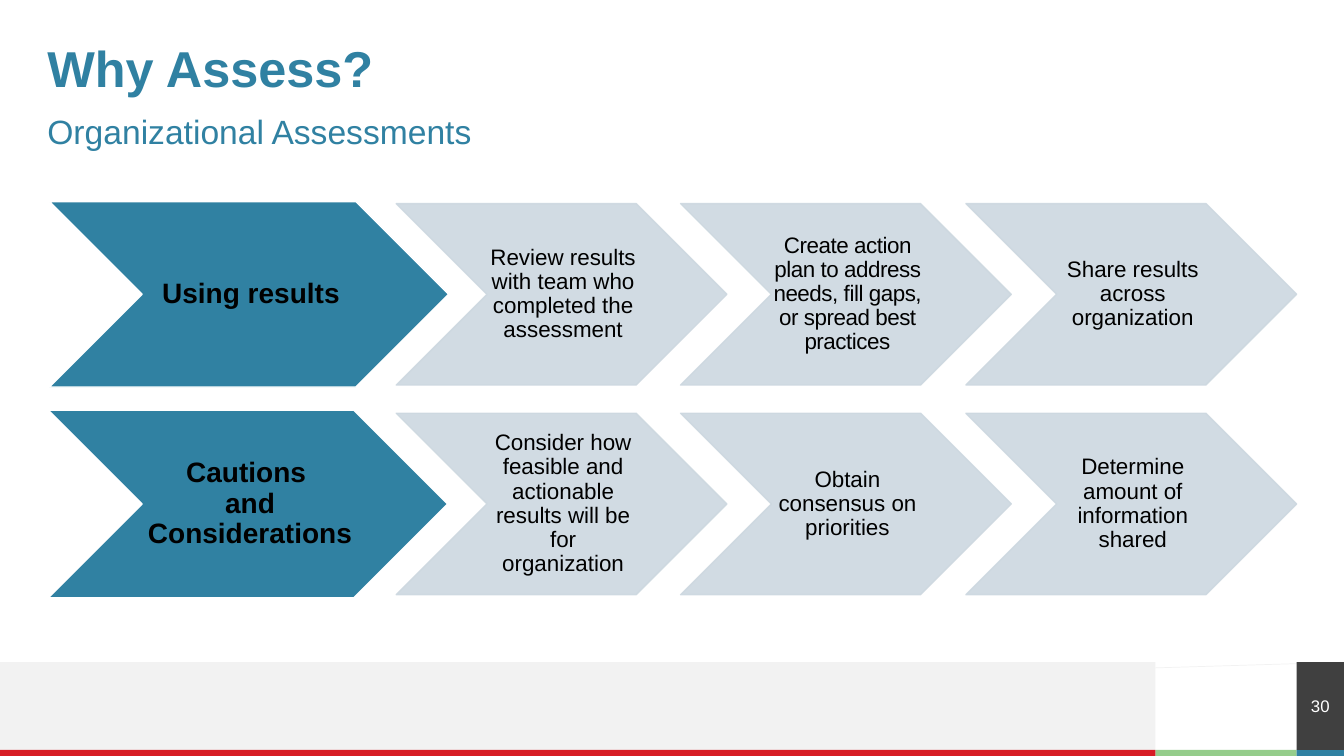
import pptx
import pptx.dml.color
import pptx.enum.shapes
import pptx.enum.text
import pptx.oxml
import pptx.oxml.ns
import pptx.util

SHAPES = pptx.enum.shapes.MSO_SHAPE
ALIGN = pptx.enum.text.PP_ALIGN
ANCHOR = pptx.enum.text.MSO_ANCHOR

BLUE, RED, GREEN = "3081A2", "D71D24", "95CD8B"
PALE_BLUE, PALE_GREY, DARK_GREY = "CDD8E0", "F2F2F2", "404040"
WHITE, BLACK = "FFFFFF", "000000"

ROWS = [
    ("Using results", (49, 200, 396, 184), [
        ("Review results with team who completed the assessment", 0),
        ("Create action plan to address needs, fill gaps, or spread best practices", -30),
        ("Share results across organization", 0),
    ]),
    ("Cautions \vand Considerations", (48, 407, 396, 186), [
        ("Consider how feasible and actionable results will be for organization", 0),
        ("Obtain consensus on priorities", 0),
        ("Determine amount of information shared", 0),
    ]),
]


def px(length):
    return pptx.util.Emu(length * 9144)


def color(value):
    return pptx.dml.color.RGBColor.from_string(value)


def write_text(shape, text, size=16, fill=BLACK, bold=False, align=ALIGN.LEFT,
               anchor=ANCHOR.MIDDLE, line_spacing=1.0, insets=(0, 0, 0, 0),
               letter_spacing=0, font="Arial"):
    frame = shape.text_frame
    frame.word_wrap = True
    frame.vertical_anchor = anchor
    frame.margin_left, frame.margin_top, frame.margin_right, frame.margin_bottom = map(px, insets)
    paragraph = frame.paragraphs[0]
    paragraph.text = text
    paragraph.alignment = align
    paragraph.line_spacing = line_spacing
    for run in paragraph.runs:
        run.font.name = font
        run.font.size = pptx.util.Pt(size)
        run.font.bold = bold
        run.font.color.rgb = color(fill)
        if letter_spacing:
            run._r.get_or_add_rPr().set("spc", str(letter_spacing))


class SlideBuilder:
    """Draws styled elements on the current slide."""

    def __init__(self, slide):
        self.slide = slide

    def text(self, box, text, **style):
        write_text(self.slide.shapes.add_textbox(*map(px, box)), text, **style)

    def shape(self, kind, box, fill, line=None, opacity=100):
        shape = self.slide.shapes.add_shape(kind, *map(px, box))
        shape.shadow.inherit = False
        shape.fill.solid()
        shape.fill.fore_color.rgb = color(fill)
        if line:
            shape.line.color.rgb = color(line)
            shape.line.width = pptx.util.Pt(1)
        else:
            shape.line.fill.background()
        if opacity < 100:
            for paint in shape._element.spPr.iter(pptx.oxml.ns.qn("a:srgbClr")):
                alpha = pptx.oxml.parse_xml(f"<a:alpha {pptx.oxml.ns.nsdecls('a')}/>")
                alpha.set("val", str(opacity * 1000))
                paint.append(alpha)
        return shape

    def line(self, start, end, stroke, width):
        connector = self.slide.shapes.add_connector(
            pptx.enum.shapes.MSO_CONNECTOR.STRAIGHT, *map(px, start + end))
        connector.line.color.rgb = color(stroke)
        connector.line.width = pptx.util.Pt(width)
        connector._element.spPr.append(
            pptx.oxml.parse_xml(f"<a:effectLst {pptx.oxml.ns.nsdecls('a')}/>"))

    def chevron(self, box, text, fill, line, opacity=100, **style):
        self.shape(SHAPES.CHEVRON, box, fill, line, opacity)
        left, top, width, height = box
        self.text((left + height // 2, top, width - height + 1, height), text,
                  align=ALIGN.CENTER, line_spacing=0.9, **style)


def main():
    presentation = pptx.Presentation()
    presentation.slide_width, presentation.slide_height = px(1333), px(750)
    builder = SlideBuilder(presentation.slides.add_slide(presentation.slide_layouts[6]))

    for box, fill in [
        ((1146, 744, 140, 7), GREEN),
        ((0, 657, 1146, 87), PALE_GREY),
        ((0, 744, 1146, 7), RED),
        ((1286, 744, 47, 6), BLUE),
    ]:
        builder.shape(SHAPES.RECTANGLE, box, fill)
    builder.line((1333, 657), (0, 697), PALE_GREY, 0.5)

    builder.text((47, 47, 1239, 47), "Why Assess?", size=36, fill=BLUE, bold=True,
                 line_spacing=0.9)
    builder.text((47, 110, 1240, 39), "Organizational Assessments", size=24, fill=BLUE,
                 anchor=ANCHOR.TOP)
    page_number = builder.shape(SHAPES.RECTANGLE, (1286, 657, 47, 87), DARK_GREY)
    write_text(page_number, "30", size=12, fill=WHITE, align=ALIGN.CENTER)

    for row, (heading, heading_box, steps) in enumerate(ROWS):
        builder.chevron(heading_box, heading, BLUE, WHITE, size=20, bold=True,
                        insets=(3, 1, 0, 1))
        for column, (step, letter_spacing) in enumerate(steps):
            box = (393 + column * 565 // 2, 202 + row * 208, 328, 180)
            builder.chevron(box, step, PALE_BLUE, PALE_BLUE, opacity=90,
                            insets=(2, 1, 0, 1), letter_spacing=letter_spacing)

    presentation.save("out.pptx")


if __name__ == "__main__":
    main()
